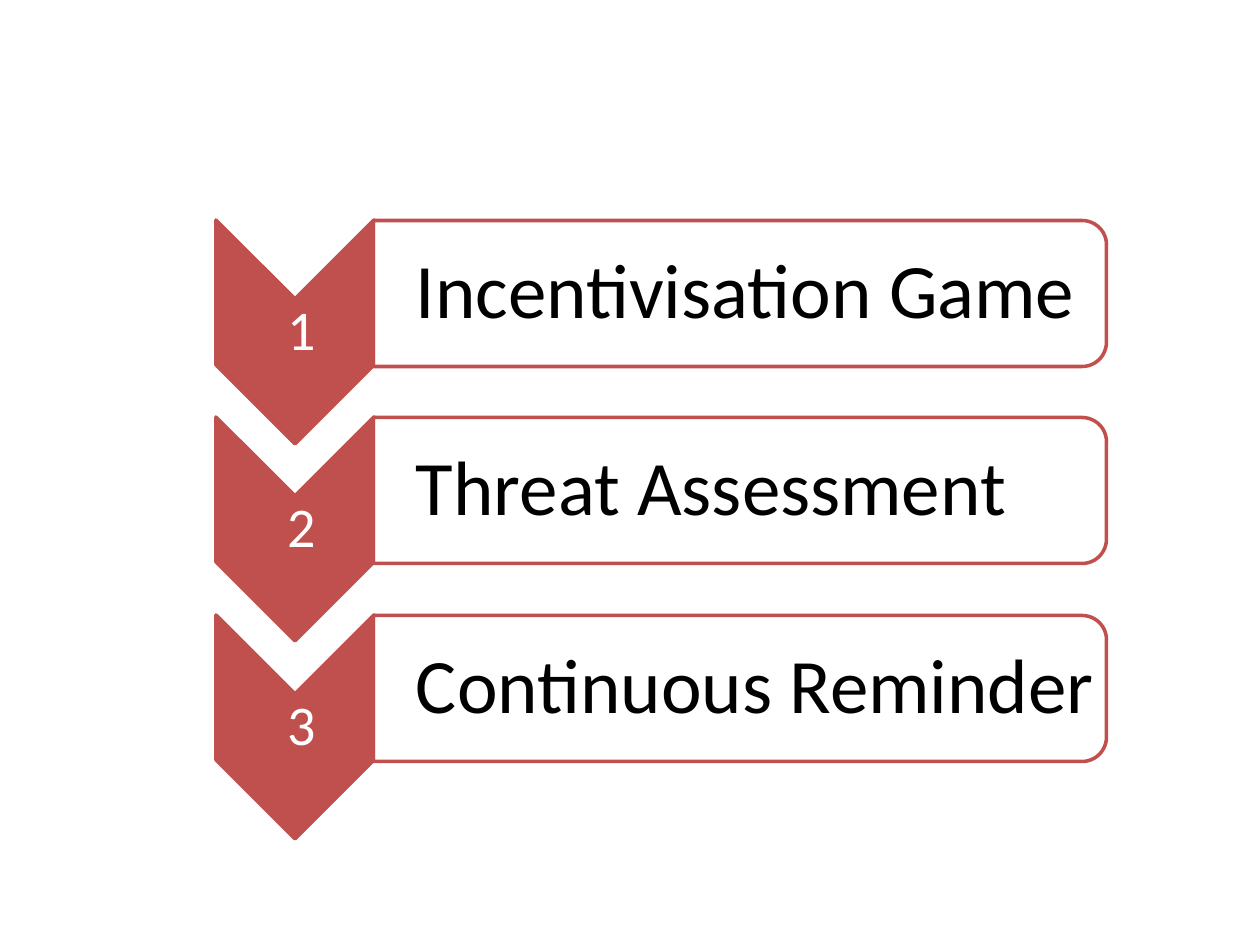
from lxml import etree
from pptx import Presentation
from pptx import util as u
from pptx.dml.color import RGBColor
from pptx.enum import shapes, text
from pptx.oxml.ns import qn

PX = u.Inches(1) // 126
RED = RGBColor(0xC0, 0x50, 0x4D)
WHITE = RGBColor(0xFF, 0xFF, 0xFF)
BLACK = RGBColor(0, 0, 0)


def add_rotated(preset, left, top, width, height, fill):
    shape = slide.shapes.add_shape(preset, left * PX, top * PX, width * PX, height * PX)
    shape.rotation = 90
    shape.shadow.inherit = False
    shape.fill.solid()
    shape.fill.fore_color.rgb = fill
    shape.line.color.rgb = RED
    shape.line.width = u.Pt(2)
    return shape


def add_label(words, left, top, width, height, inset, margin, size, color, align):
    frame = slide.shapes.add_textbox(left * PX, top * PX, width * PX, height * PX).text_frame
    frame.word_wrap = True
    frame.vertical_anchor = text.MSO_ANCHOR.MIDDLE
    frame.margin_left = inset * PX
    frame.margin_right = frame.margin_top = frame.margin_bottom = margin * PX
    paragraph = frame.paragraphs[0]
    paragraph.alignment = align
    paragraph.line_spacing = 0.9
    run = paragraph.add_run()
    run.text = words
    run.font.name = "Calibri"
    run.font.size = u.Pt(size)
    run.font.color.rgb = color


prs = Presentation()
prs.slide_width = 1260 * PX
prs.slide_height = 945 * PX
slide = prs.slides.add_slide(prs.slide_layouts[6])

steps = ["Incentivisation Game", "Threat Assessment", "Continuous Reminder"]
for index, step in enumerate(steps):
    drop = index * 395 // 2
    add_rotated(shapes.MSO_SHAPE.CHEVRON, 183, 253 + drop, 224, 158, RED)
    add_label(f" {index + 1}", 216, 299 + drop, 158, 67, 3, 3, 32, WHITE,
              text.PP_ALIGN.CENTER)

    panel = add_rotated(shapes.MSO_SHAPE.ROUND_2_SAME_RECTANGLE,
                        667, -73 + drop, 146, 733, WHITE)
    panel_color = panel.fill._xPr.find(qn("a:solidFill"))[0]
    etree.SubElement(panel_color, qn("a:alpha"), val="90000")
    add_label(step, 373, 228 + drop, 726, 131, 43, 4, 44, BLACK,
              text.PP_ALIGN.LEFT)

prs.save("out.pptx")
